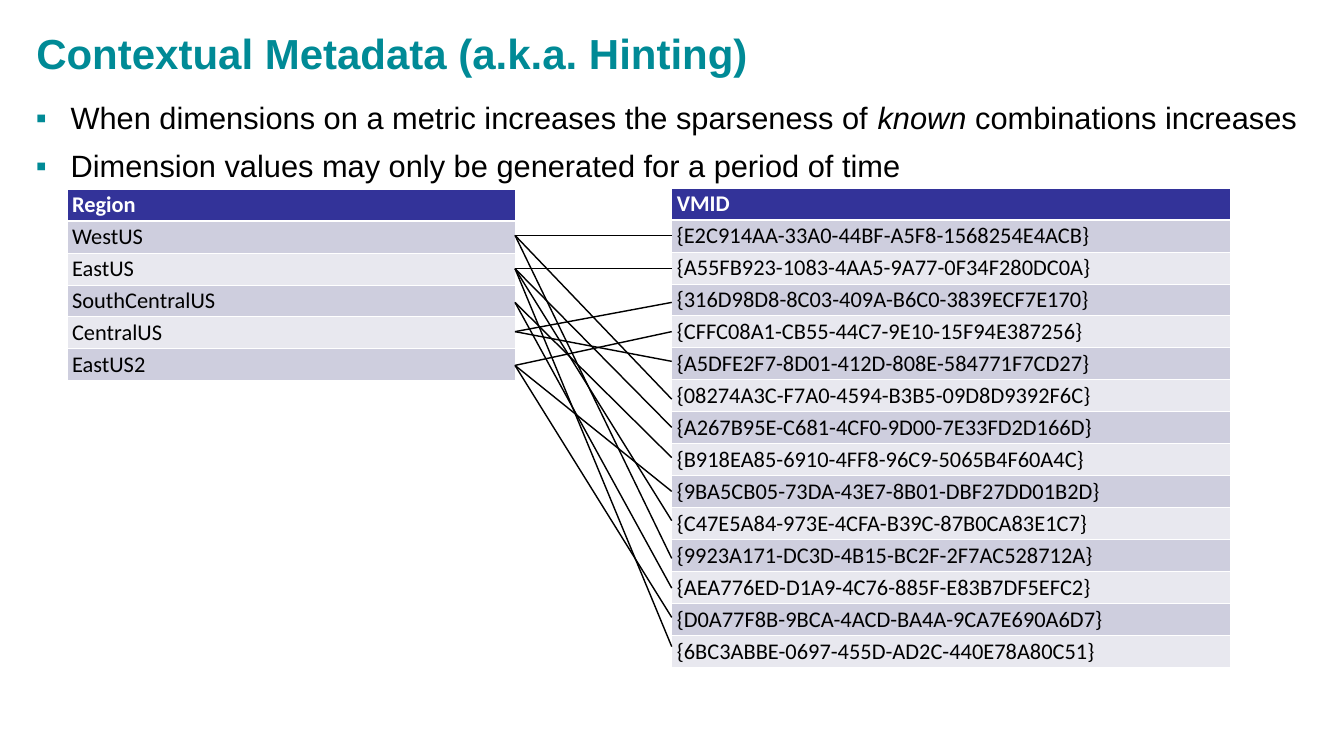
from lxml.etree import SubElement
from pptx import Presentation
from pptx.dml.color import RGBColor
from pptx.enum.shapes import MSO_CONNECTOR
from pptx.enum.text import MSO_ANCHOR, PP_ALIGN
from pptx.oxml.ns import qn
from pptx.util import Inches, Pt

COLORS = {"teal": "008A96", "black": "000000", "white": "FFFFFF",
          "header": "333399", "odd": "CECEDE", "even": "E8E8EF"}
TITLE_FONT = {"name": "Arial", "size": Pt(60), "bold": True}
BODY_FONT = {"name": "Arial", "size": Pt(44), "bold": False}
CELL_FONT = {"name": "Calibri", "size": Pt(32), "bold": False}
INSETS = {f"margin_{side}": Inches(0.04) for side in ("left", "top", "right", "bottom")}
ROW_HEIGHT = 0.63
REGION_RIGHT, VMID_LEFT = 10.22, 13.33

BULLETS = [
    [("When dimensions on a metric increases the sparseness of ", False),
     ("known", True), (" combinations increases", False)],
    [("Dimension values may only be generated for a period of time", False)],
]
REGIONS = ["WestUS", "EastUS", "SouthCentralUS", "CentralUS", "EastUS2"]
VMIDS = [
    "{E2C914AA-33A0-44BF-A5F8-1568254E4ACB}",
    "{A55FB923-1083-4AA5-9A77-0F34F280DC0A}",
    "{316D98D8-8C03-409A-B6C0-3839ECF7E170}",
    "{CFFC08A1-CB55-44C7-9E10-15F94E387256}",
    "{A5DFE2F7-8D01-412D-808E-584771F7CD27}",
    "{08274A3C-F7A0-4594-B3B5-09D8D9392F6C}",
    "{A267B95E-C681-4CF0-9D00-7E33FD2D166D}",
    "{B918EA85-6910-4FF8-96C9-5065B4F60A4C}",
    "{9BA5CB05-73DA-43E7-8B01-DBF27DD01B2D}",
    "{C47E5A84-973E-4CFA-B39C-87B0CA83E1C7}",
    "{9923A171-DC3D-4B15-BC2F-2F7AC528712A}",
    "{AEA776ED-D1A9-4C76-885F-E83B7DF5EFC2}",
    "{D0A77F8B-9BCA-4ACD-BA4A-9CA7E690A6D7}",
    "{6BC3ABBE-0697-455D-AD2C-440E78A80C51}",
]
# Height of each region's line start, with the heights its lines reach
LINKS = {
    4.67: [4.67, 7.92, 11.08],
    5.33: [5.33, 12.83, 8.48, 10.33],
    6: [11.67, 9.08],
    6.58: [6, 7.17],
    7.25: [6.58, 9.75, 12.25],
}


def set_values(target, values):
    for name, value in values.items():
        setattr(target, name, value)


def rgb(color):
    return RGBColor.from_string(COLORS[color])


def format_font(font, values, color):
    set_values(font, values)
    font.color.rgb = rgb(color)


def add_title(page, text):
    title = page.shapes.title
    set_values(title, {"left": Inches(0.68), "top": Inches(0.26),
                       "width": Inches(25.3), "height": Inches(1.57)})
    frame = title.text_frame
    set_values(frame, {**INSETS, "vertical_anchor": MSO_ANCHOR.MIDDLE, "word_wrap": True})
    para = frame.paragraphs[0]
    para.text = text
    para.alignment = PP_ALIGN.LEFT
    format_font(para.runs[0].font, TITLE_FONT, "teal")


def add_bullet(para):
    properties = para._p.get_or_add_pPr()
    properties.set("marL", str(Inches(0.69)))
    properties.set("indent", str(-Inches(0.69)))
    color = SubElement(properties, qn("a:buClr"))
    SubElement(color, qn("a:srgbClr"), val=COLORS["teal"])
    SubElement(properties, qn("a:buFont"), typeface="Arial")
    SubElement(properties, qn("a:buChar"), char="▪")


def add_body(page, bullets):
    box = page.shapes.add_textbox(Inches(0.67), Inches(2), Inches(25.31), Inches(11.53))
    frame = box.text_frame
    set_values(frame, {**INSETS, "word_wrap": True})
    for index, spans in enumerate(bullets):
        para = frame.add_paragraph() if index else frame.paragraphs[0]
        add_bullet(para)
        para.line_spacing = 0.9
        if index:
            para.space_before = Pt(21)
        for text, italic in spans:
            span = para.add_run()
            span.text = text
            format_font(span.font, {**BODY_FONT, "italic": italic}, "black")


def set_borders(cell, bottom):
    """Draw white borders; they must come before the fill in the cell's XML."""
    properties = cell._tc.get_or_add_tcPr()
    widths = {"lnL": 1, "lnR": 1, "lnT": 1, "lnB": bottom}
    for side, width in widths.items():
        line = SubElement(properties, qn(f"a:{side}"), w=str(Pt(width)))
        fill = SubElement(line, qn("a:solidFill"))
        SubElement(fill, qn("a:srgbClr"), val=COLORS["white"])


def add_column_table(page, left, top, width, header, values):
    rows = [header, *values]
    table = page.shapes.add_table(len(rows), 1, Inches(left), Inches(top), Inches(width),
                                  Inches(ROW_HEIGHT * len(rows))).table
    for index, text in enumerate(rows):
        is_header = index == 0
        table.rows[index].height = Inches(ROW_HEIGHT)
        cell = table.cell(index, 0)
        set_borders(cell, 3 if is_header or index == 0 else 1)
        cell.fill.solid()
        fill = "header" if is_header else "odd" if index % 2 else "even"
        cell.fill.fore_color.rgb = rgb(fill)
        cell.text = text
        para = cell.text_frame.paragraphs[0]
        para.alignment = PP_ALIGN.LEFT
        format_font(para.runs[0].font, {**CELL_FONT, "bold": is_header},
                    "white" if is_header else "black")


def add_link(page, start, end):
    link = page.shapes.add_connector(MSO_CONNECTOR.STRAIGHT, Inches(REGION_RIGHT),
                                     Inches(start), Inches(VMID_LEFT), Inches(end))
    link.line.color.rgb = rgb("black")
    link.line.width = Pt(2)
    SubElement(link._element.spPr, qn("a:effectLst"))


def main():
    deck = Presentation()
    set_values(deck, {"slide_width": Inches(26.67), "slide_height": Inches(15)})
    page = deck.slides.add_slide(deck.slide_layouts[5])
    add_title(page, "Contextual Metadata (a.k.a. Hinting)")
    add_body(page, BULLETS)
    add_column_table(page, 1.33, 3.75, 8.89, "Region", REGIONS)
    add_column_table(page, VMID_LEFT, 3.73, 11.09, "VMID", VMIDS)
    for start, ends in LINKS.items():
        for end in ends:
            add_link(page, start, end)
    deck.save("out.pptx")


if __name__ == "__main__":
    main()
